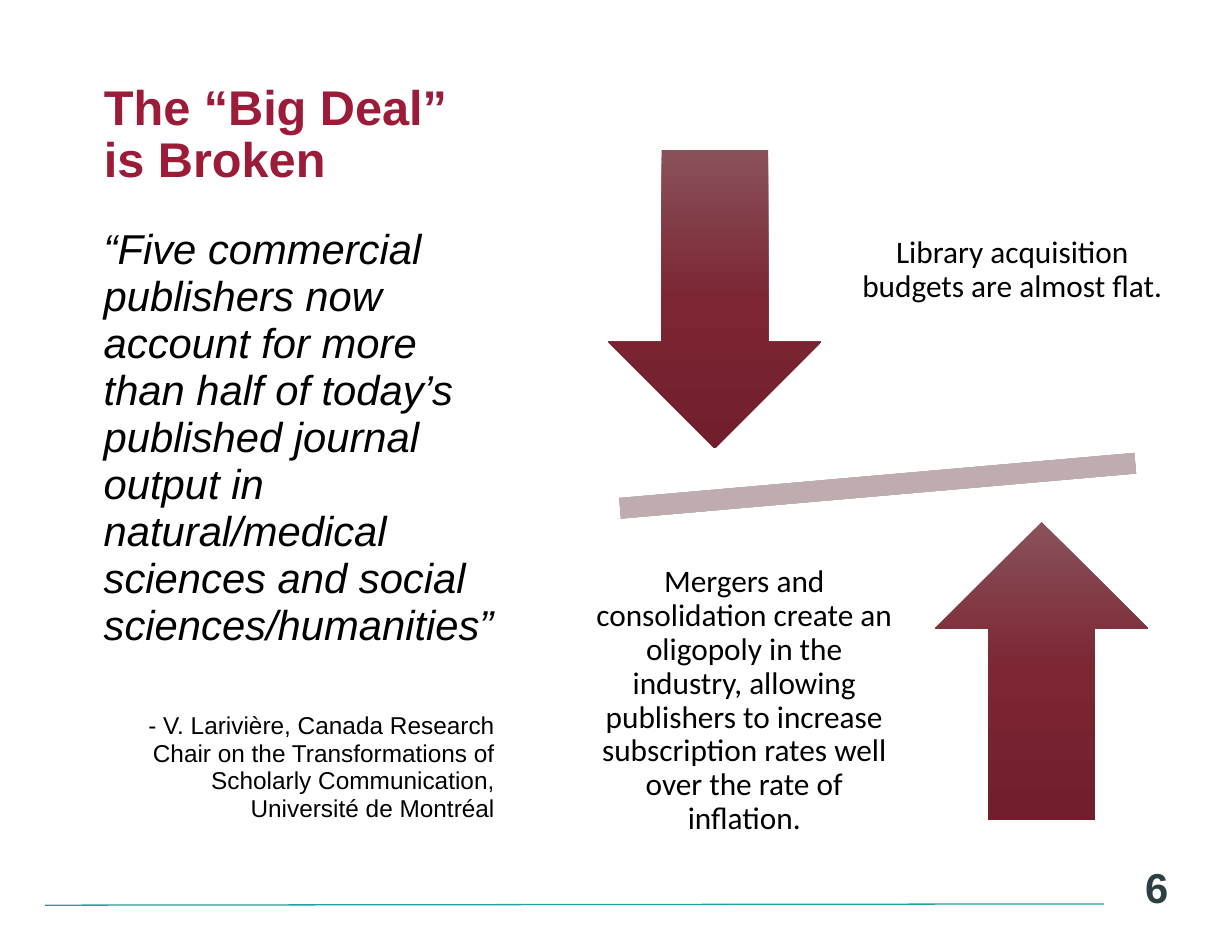
import copy
import pptx
import pptx.util
import pptx.dml.color
import pptx.enum.shapes
import pptx.enum.text
import pptx.oxml

Inch, Pt = pptx.util.Inches, pptx.util.Pt
RGB = pptx.dml.color.RGBColor
Kind = pptx.enum.shapes.MSO_SHAPE
Align = pptx.enum.text.PP_ALIGN
Anchor = pptx.enum.text.MSO_ANCHOR

hues = {"title": "9C1B39", "text": "000000", "page": "2C3F45", "rule": "21A29D"}
fades = {
    "arrow": ("895259", "7C2634", "721E2C"),
    "bar": ("C6B7B8", "BEACAE", "AA989A"),
}

deck = pptx.Presentation()
deck.slide_width, deck.slide_height = Inch(9.84), Inch(7.5)
slide = deck.slides.add_slide(deck.slide_layouts[5])
shapes = slide.shapes


def write(box, place, paras, hue, anchor=Anchor.MIDDLE, inset=None):
    """Place a box and fill it with (text, font values, paragraph values)."""
    box.left, box.top, box.width, box.height = map(Inch, place)
    frame = box.text_frame
    frame.word_wrap = True
    frame.auto_size = pptx.enum.text.MSO_AUTO_SIZE.NONE
    frame.vertical_anchor = anchor
    if inset:
        for side in ("left", "top", "right", "bottom"):
            setattr(frame, "margin_" + side, Inch(inset))
    for i, (text, face, form) in enumerate(paras):
        para = frame.add_paragraph() if i else frame.paragraphs[0]
        para.text = text
        for key, value in form.items():
            setattr(para, key, value)
        for key, value in face.items():
            setattr(para.font, key, value)
        para.font.color.rgb = RGB.from_string(hues[hue])


def draw(kind, place, fade, turn=0):
    """Add a shape with a three-stop fade from top to bottom."""
    shape = shapes.add_shape(kind, *map(Inch, place))
    shape.shadow.inherit = False
    shape.line.fill.background()
    shape.rotation = turn
    shape.fill.gradient()
    shape.fill.gradient_angle = 270
    first = shape._element.spPr.find(".//" + pptx.oxml.ns.qn("a:gs"))
    first.addnext(copy.deepcopy(first))
    for i, stop in enumerate(shape.fill.gradient_stops):
        stop.position = i / 2
        stop.color.rgb = RGB.from_string(fades[fade][i])


# Footer rule and page number
rule = shapes.add_connector(pptx.enum.shapes.MSO_CONNECTOR.STRAIGHT,
                            Inch(8.82), Inch(7.22), Inch(0.36), Inch(7.23))
rule.line.color.rgb = RGB.from_string(hues["rule"])
rule.line.width = Pt(0.75)
rule._element.spPr.append(pptx.oxml.parse_xml(
    f'<a:effectLst {pptx.oxml.ns.nsdecls("a")}/>'))
write(shapes.add_textbox(0, 0, 0, 0), (6.95, 6.67, 2.48, 0.83),
      [("6", {"name": "Arial", "size": Pt(24), "bold": True},
        {"alignment": Align.RIGHT})], "page")

# Title
write(shapes.title, (0.73, 0.43, 3.45, 1.31),
      [("The “Big Deal”\vis Broken",
        {"name": "Arial", "size": Pt(28), "bold": True},
        {"alignment": Align.LEFT, "line_spacing": 0.9})], "title")

# Quotation and its author
quote = ("“Five commercial publishers now account for more than half of today’s "
         "published journal output in natural/medical sciences and social "
         "sciences/humanities”")
author = ("- V. Larivière, Canada Research Chair on the Transformations of "
          "Scholarly Communication,\vUniversité de Montréal")
write(shapes.add_textbox(0, 0, 0, 0), (0.73, 1.76, 3.32, 4.92), [
    (quote, {"name": "Arial", "size": Pt(24), "italic": True},
     {"line_spacing": 0.94}),
    (author, {"name": "Arial", "size": Pt(14)},
     {"alignment": Align.RIGHT, "line_spacing": 0.94, "space_before": Pt(36)}),
], "text", Anchor.TOP)

# Tilted bar between two opposing arrows
draw(Kind.MATH_MINUS, (4.2, 3.53, 5.62, 0.7), "bar", 355)
sides = [
    (Kind.DOWN_ARROW, (4.86, 1.2), (6.74, 0.91, 2.69, 2.5),
     "Library acquisition budgets are almost flat."),
    (Kind.UP_ARROW, (7.47, 4.17), (4.56, 4.35, 2.77, 2.5),
     "Mergers and consolidation create an oligopoly in the industry, allowing "
     "publishers to increase subscription rates well over the rate of inflation."),
]
for kind, spot, place, text in sides:
    draw(kind, (*spot, 1.7, 2.38), "arrow")
    write(shapes.add_textbox(0, 0, 0, 0), place,
          [(text, {"name": "Calibri", "size": Pt(18)},
            {"alignment": Align.CENTER, "line_spacing": 0.9})],
          "text", inset=0.14)

deck.save("out.pptx")
